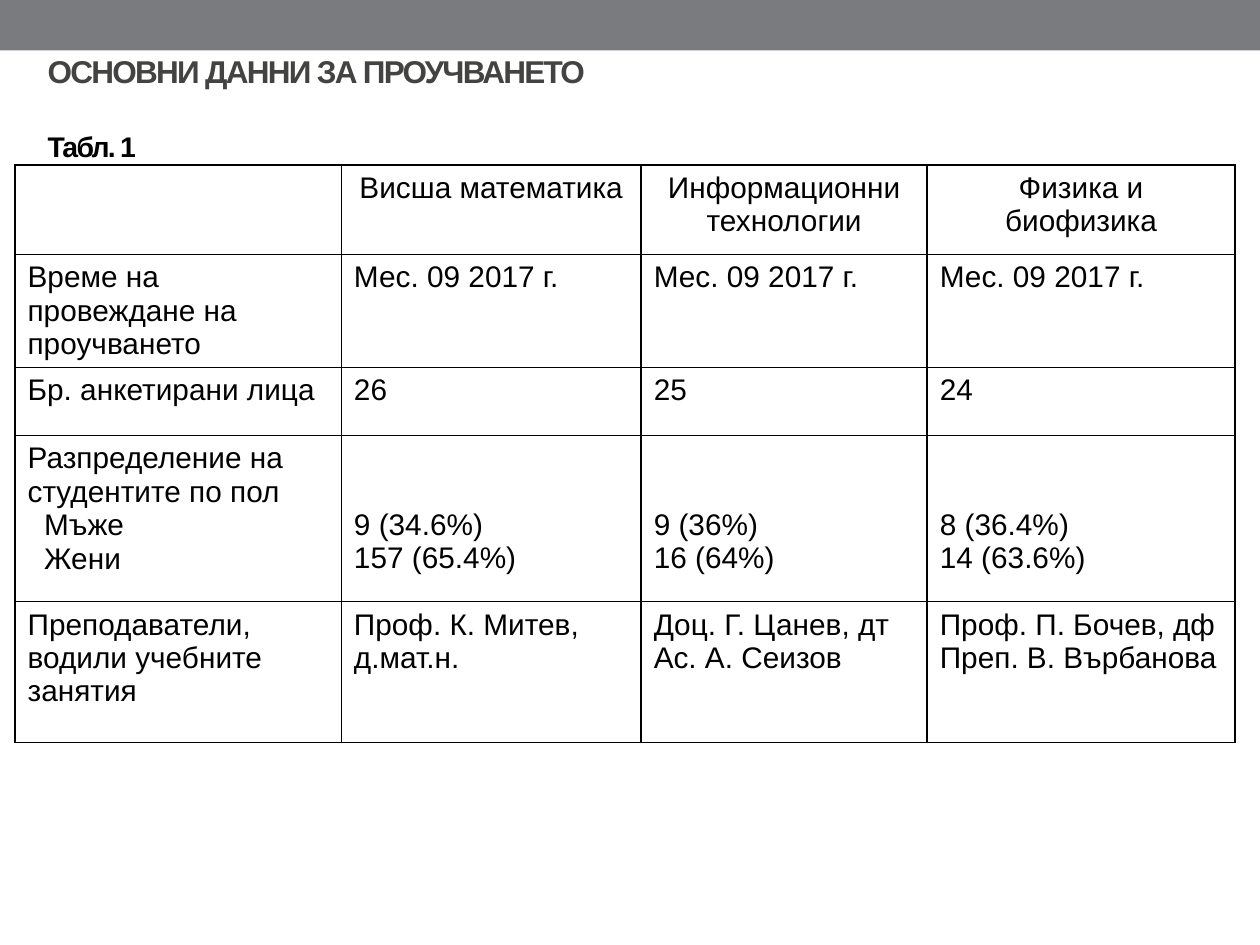
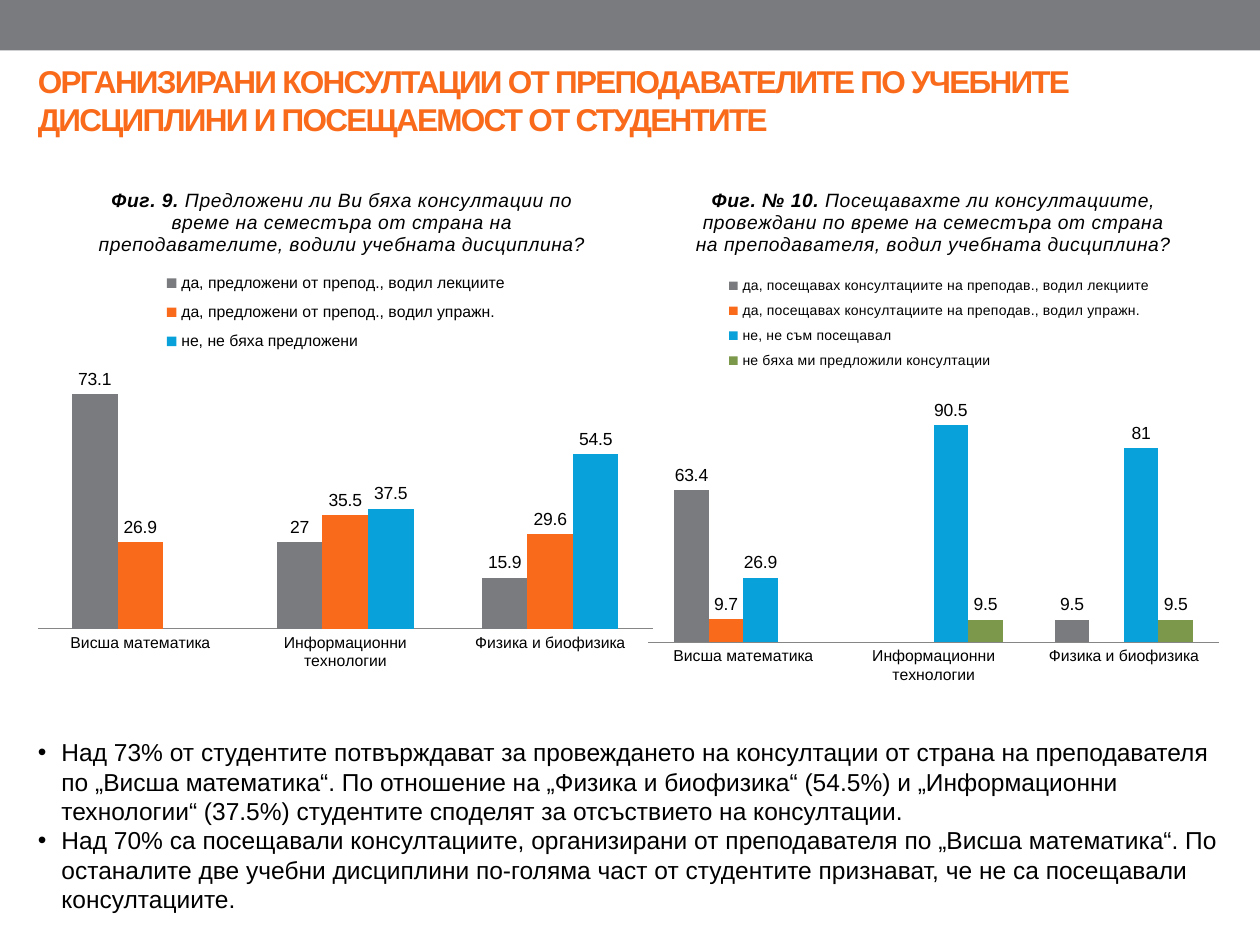
from lxml import etree
from pptx import Presentation
from pptx.chart.data import CategoryChartData
from pptx.dml.color import RGBColor
from pptx.enum.chart import XL_CHART_TYPE, XL_LABEL_POSITION, XL_LEGEND_POSITION, XL_TICK_MARK
from pptx.enum.shapes import MSO_SHAPE
from pptx.enum.text import MSO_ANCHOR, MSO_AUTO_SIZE, PP_ALIGN
from pptx.oxml.ns import qn
from pptx.util import Pt

COLUMN = XL_CHART_TYPE.COLUMN_CLUSTERED
OUTSIDE = XL_LABEL_POSITION.OUTSIDE_END
TOP_KEY = XL_LEGEND_POSITION.TOP
NO_TICK = XL_TICK_MARK.NONE
RECT = MSO_SHAPE.RECTANGLE
TOP, MIDDLE = MSO_ANCHOR.TOP, MSO_ANCHOR.MIDDLE
NO_FIT = MSO_AUTO_SIZE.NONE
LEFT, CENTER = PP_ALIGN.LEFT, PP_ALIGN.CENTER

# Shared look
FONT = "Arial"
GREY, ORANGE, BLUE, GREEN = "797B7E", "F96A1B", "08A1D9", "7C984A"
BLACK, WHITE, DARK, AXIS = "000000", "FFFFFF", "434342", "868686"
SERIES = [GREY, ORANGE, BLUE, GREEN]
WIDTH, HEIGHT, BAND = 720, 540, 28.8

# Slide 1 content: each cell is a list of lines
HEAD, TABLE_NO = "ОСНОВНИ ДАННИ ЗА ПРОУЧВАНЕТО", "Табл. 1"
SUBJECTS = ["Висша математика", "Информационни технологии", "Физика и биофизика"]
MEN, WOMEN = "Мъже", "Жени"
ROWS = [
    [[]] + [[name] for name in SUBJECTS],
    [["Време на провеждане на проучването"]] + [["Мес. 09 2017 г."]] * 3,
    [["Бр. анкетирани лица"], ["26"], ["25"], ["24"]],
    [["Разпределение на студентите по пол", MEN, WOMEN],
     ["9 (34.6%)", "157 (65.4%)"], ["9 (36%)", "16 (64%)"], ["8 (36.4%)", "14 (63.6%)"]],
    [["Преподаватели, водили учебните занятия"], ["Проф. К. Митев, д.мат.н."],
     ["Доц. Г. Цанев, дт", "Ас. А. Сеизов"], ["Проф. П. Бочев, дф", "Преп. В. Върбанова"]],
]
COLS = [186.5, 171.3, 163.5, 175.9]
TALL = [51, 64.6, 39, 95, 80.6]
SEX_ROW = 3

# Slide 2 content
TOPIC = ("ОРГАНИЗИРАНИ КОНСУЛТАЦИИ ОТ ПРЕПОДАВАТЕЛИТЕ ПО УЧЕБНИТЕ "
         "ДИСЦИПЛИНИ И ПОСЕЩАЕМОСТ ОТ СТУДЕНТИТЕ")
CHARTS = [
    dict(box=(14.4, 94.3, 362.2, 311.8), top=80, key_size=9,
         title=("Фиг. 9.", " Предложени ли Ви бяха консултации по време на семестъра от страна "
                "на преподавателите, водили учебната дисциплина?"),
         plot=(0.02, 0.38, 0.97, 0.47), key=(0.21, 0.18, 0.56, 0.18),
         data=[("да, предложени от препод., водил лекциите", (73.1, 27, 15.9)),
               ("да, предложени от препод., водил упражн.", (26.9, 35.5, 29.6)),
               ("не, не бяха предложени", (None, 37.5, 54.5))]),
    dict(box=(360, 94.3, 347, 311.8), top=100, key_size=8,
         title=("Фиг. № 10.", " Посещавахте ли консултациите, провеждани по време на семестъра "
                "от страна на преподавателя, водил учебната дисциплина?"),
         plot=(0.03, 0.435, 0.94, 0.44), key=(0.15, 0.19, 0.72, 0.2),
         data=[("да, посещавах консултациите на преподав., водил лекциите", (63.4, None, 9.5)),
               ("да, посещавах консултациите на преподав., водил упражн.", (9.7, None, None)),
               ("не, не съм посещавал", (26.9, 90.5, 81)),
               ("не бяха ми предложили консултации", (None, 9.5, 9.5))]),
]
NOTES = [
    "Над 73% от студентите потвърждават за провеждането на консултации от страна на "
    "преподавателя по „Висша математика“. По отношение на „Физика и биофизика“ (54.5%) и "
    "„Информационни технологии“ (37.5%) студентите споделят за отсъствието на консултации.",
    "Над 70% са посещавали консултациите, организирани от преподавателя по „Висша "
    "математика“. По останалите две учебни дисциплини по-голяма част от студентите "
    "признават, че не са посещавали консултациите.",
]


def rgb(code):
    return RGBColor.from_string(code)


def style(font, size, color=BLACK, bold=False, italic=False):
    font.name, font.size = FONT, Pt(size)
    font.bold, font.italic = bold, italic
    font.color.rgb = rgb(color)


def add_run(para, text, size, color=BLACK, bold=False, italic=False, space=0):
    run = para.add_run()
    run.text = text
    style(run.font, size, color, bold, italic)
    if space:
        run.font._element.set("spc", str(space))


def place(shape, box):
    shape.left, shape.top, shape.width, shape.height = map(Pt, box)


def get_para(frame, i):
    return frame.add_paragraph() if i else frame.paragraphs[0]


def indent(para, left, first=0):
    props = para._p.get_or_add_pPr()
    props.set("marL", str(Pt(left)))
    props.set("indent", str(Pt(first)))
    return props


def new_slide(deck, layout, box, anchor, lines):
    """Add a slide with the grey band and a title of (text, size, colour) lines."""
    slide = deck.slides.add_slide(deck.slide_layouts[layout])
    band = slide.shapes.add_shape(RECT, 0, 0, Pt(WIDTH), Pt(BAND))
    band.shadow.inherit = False
    band.fill.solid()
    band.fill.fore_color.rgb = rgb(GREY)
    band.line.fill.background()
    title = slide.shapes.title
    place(title, box)
    frame = title.text_frame
    frame.auto_size, frame.vertical_anchor = NO_FIT, anchor
    for i, (text, size, color) in enumerate(lines):
        para = get_para(frame, i)
        para.alignment = LEFT
        para.space_before = Pt(22.5 if i else 0)
        add_run(para, text, size, color, bold=True, space=-100)
    return slide


def add_edges(cell):
    props = cell._tc.get_or_add_tcPr()
    for side in ("lnL", "lnR", "lnT", "lnB"):
        line = etree.SubElement(props, qn("a:" + side), w=str(Pt(1)))
        fill = etree.SubElement(line, qn("a:solidFill"))
        etree.SubElement(fill, qn("a:srgbClr"), val=BLACK)


def add_grid(slide):
    shape = slide.shapes.add_table(len(ROWS), len(COLS), Pt(8.6), Pt(94.3),
                                   Pt(sum(COLS)), Pt(sum(TALL)))
    table = shape.table
    table.first_row = table.horz_banding = False
    for col, width in zip(table.columns, COLS):
        col.width = Pt(width)
    for r, row in enumerate(ROWS):
        table.rows[r].height = Pt(TALL[r])
        for c, lines in enumerate(row):
            cell = table.cell(r, c)
            add_edges(cell)
            cell.fill.solid()
            cell.fill.fore_color.rgb = rgb(WHITE)
            # Counts line up with the third and fourth lines of the label
            if r == SEX_ROW and c:
                cell.margin_top = Pt(41.7)
            for i, text in enumerate(lines):
                para = get_para(cell.text_frame, i)
                para.alignment = LEFT if r else CENTER
                if text in (MEN, WOMEN):
                    indent(para, 9.4)
                add_run(para, text, 17)


def set_layout(part, index, box, inner=False):
    for old in part.findall(qn("c:layout")):
        part.remove(old)
    layout = etree.Element(qn("c:layout"))
    manual = etree.SubElement(layout, qn("c:manualLayout"))
    items = [("layoutTarget", "inner")] if inner else []
    items += [("xMode", "edge"), ("yMode", "edge")]
    items += zip("xywh", map(str, box))
    for tag, val in items:
        etree.SubElement(manual, qn("c:" + tag), val=val)
    part.insert(index, layout)


def add_bars(slide, info):
    data = CategoryChartData()
    data.categories = SUBJECTS
    for name, vals in info["data"]:
        data.add_series(name, vals)
    chart = slide.shapes.add_chart(COLUMN, *map(Pt, info["box"]), data).chart
    style(chart.font, 10)

    # Title: bold figure number, then the question
    para = chart.chart_title.text_frame.paragraphs[0]
    for text, bold in zip(info["title"], (True, False)):
        add_run(para, text, 11, bold=bold, italic=True, space=20)
    chart.chart_title.include_in_layout = False

    # Legend and plot area
    chart.has_legend = True
    key = chart.legend
    key.position, key.include_in_layout = TOP_KEY, False
    style(key.font, info["key_size"])
    set_layout(key._element, 1, info["key"])
    area = chart._chartSpace.find(".//" + qn("c:plotArea"))
    set_layout(area, 0, info["plot"], inner=True)

    # Axes
    cats, vals = chart.category_axis, chart.value_axis
    cats.major_tick_mark = cats.minor_tick_mark = NO_TICK
    cats.format.line.color.rgb = rgb(AXIS)
    style(cats.tick_labels.font, 9)
    vals.visible = vals.has_major_gridlines = False
    vals.minimum_scale, vals.maximum_scale = 0, info["top"]

    # Bars and their values
    plot = chart.plots[0]
    plot.gap_width, plot.overlap, plot.vary_by_categories = 150, 0, False
    plot.has_data_labels = True
    labels = plot.data_labels
    labels.show_value, labels.position = True, OUTSIDE
    style(labels.font, 10)
    for bars, color in zip(plot.series, SERIES):
        bars.format.fill.solid()
        bars.format.fill.fore_color.rgb = rgb(color)


def add_notes(slide):
    body = slide.placeholders[1]
    place(body, (14.4, 417.6, 692, 113))
    frame = body.text_frame
    frame.auto_size, frame.vertical_anchor = NO_FIT, TOP
    for i, text in enumerate(NOTES):
        para = get_para(frame, i)
        para.alignment, para.space_before = LEFT, Pt(0)
        props = indent(para, 13.5, -13.5)
        etree.SubElement(props, qn("a:buFont"), typeface=FONT)
        etree.SubElement(props, qn("a:buChar"), char="•")
        add_run(para, text, 14)


def main():
    deck = Presentation()
    deck.slide_width, deck.slide_height = Pt(WIDTH), Pt(HEIGHT)

    # Slide 1: survey table
    first = new_slide(deck, 5, (20, 26, 675, 68), TOP,
                      [(HEAD, 18, DARK), (TABLE_NO, 16.2, BLACK)])
    add_grid(first)

    # Slide 2: two charts and findings
    second = new_slide(deck, 1, (14.4, 31.7, 686, 51), MIDDLE, [(TOPIC, 18, ORANGE)])
    add_notes(second)
    for info in CHARTS:
        add_bars(second, info)

    deck.save("out.pptx")


if __name__ == "__main__":
    main()
